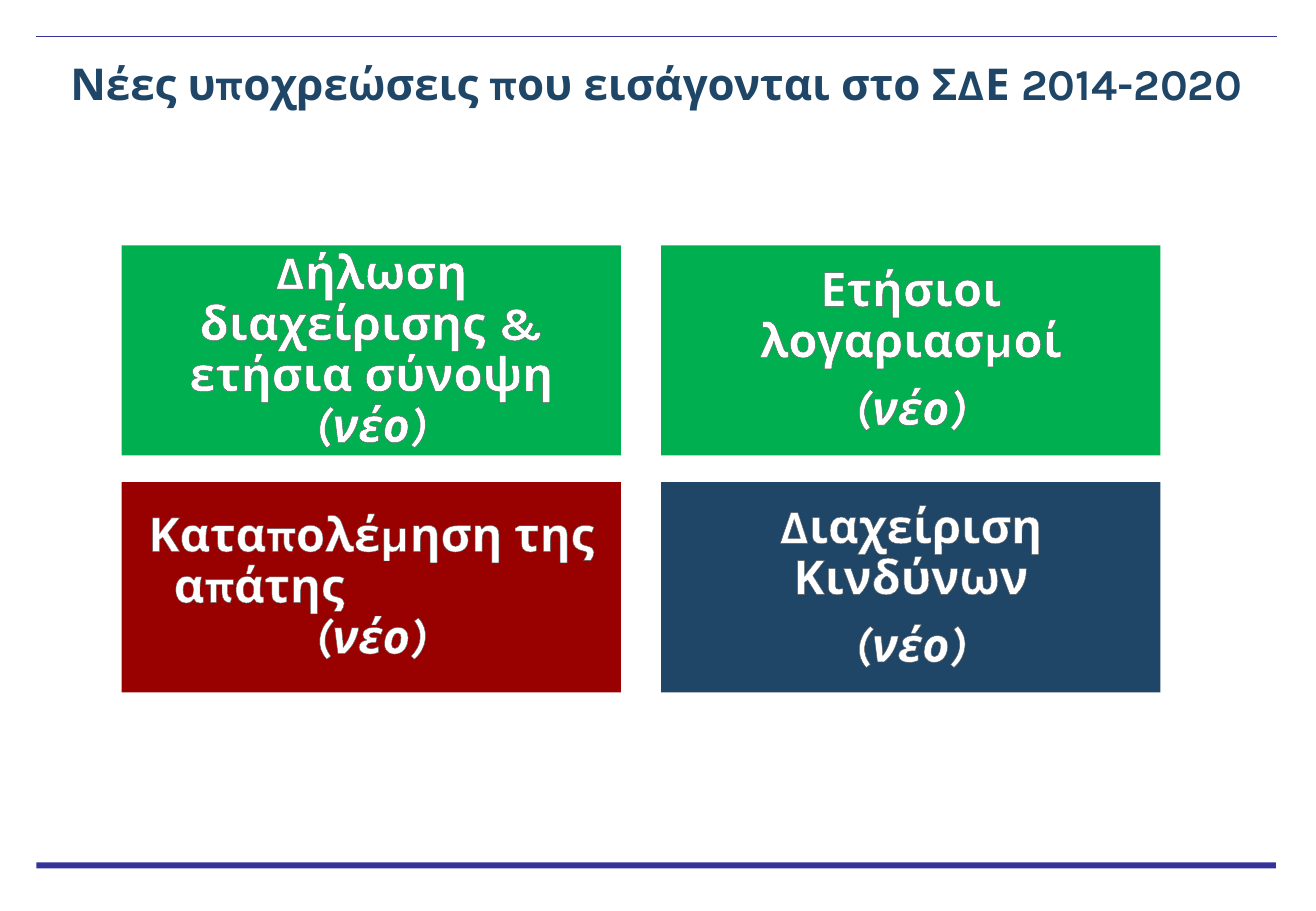
from lxml import etree
from pptx import Presentation
from pptx.dml.color import RGBColor
from pptx.enum.shapes import MSO_CONNECTOR, MSO_SHAPE
from pptx.enum.text import MSO_ANCHOR, MSO_AUTO_SIZE, PP_ALIGN
from pptx.oxml import parse_xml
from pptx.oxml.ns import nsdecls, qn
from pptx.util import Inches, Pt

# Content: each paragraph is a list of (text, italic) runs
TITLE = "Νέες υποχρεώσεις που εισάγονται στο ΣΔΕ 2014-2020"
NEW = ("(νέο)", True)
GREEN, RED, NAVY, RULE = "00B050", "990000", "1F4667", "333399"
WHITE, EDGE = "FFFFFF", "5F5F5F"
# (column, row, fill, gap after a paragraph in points, paragraphs)
OBLIGATIONS = [
    (0, 1, RED, 0, [[("Καταπολέμηση της", False)], [("απάτης", False)], [NEW]]),
    (0, 0, GREEN, 0, [[("Δήλωση διαχείρισης & ετήσια σύνοψη ", False), NEW]]),
    (1, 1, NAVY, 9.8, [[("Διαχείριση Κινδύνων", False)], [NEW]]),
    (1, 0, GREEN, 9.8, [[("Ετήσιοι λογαριασμοί", False)], [NEW]]),
]
INDENTED = {"απάτης": 0.31}  # left-aligned line and its indent

# Grid
LEFT, TOP, WIDTH, HEIGHT = 1, 2.02, 4.11, 1.73
STEP_X, STEP_Y = 4.44, 1.95


def rgb(value):
    return RGBColor.from_string(value)


def set_font(font, size, colour, italic=None):
    for name, value in {"name": "Karla", "size": Pt(size), "bold": True,
                        "italic": italic}.items():
        setattr(font, name, value)
    font.color.rgb = rgb(colour)


def set_frame(frame, anchor, inset):
    for name, value in {"word_wrap": True, "auto_size": MSO_AUTO_SIZE.NONE,
                        "vertical_anchor": anchor}.items():
        setattr(frame, name, value)
    for side in ("left", "top", "right", "bottom"):
        setattr(frame, f"margin_{side}", Inches(inset))


def add_rectangle(left, top, width, height, fill):
    rectangle = slide.shapes.add_shape(
        MSO_SHAPE.RECTANGLE, *map(Inches, (left, top, width, height)))
    rectangle.shadow.inherit = False
    rectangle.fill.solid()
    rectangle.fill.fore_color.rgb = rgb(fill)
    rectangle.line.fill.background()
    return rectangle


def add_run(paragraph, text, italic):
    run = paragraph.add_run()
    run.text = text
    set_font(run.font, 28, WHITE, italic)
    # Thin grey edge around the letters
    run.font._element.insert(0, parse_xml(
        f'<a:ln {nsdecls("a")} w="12700"><a:solidFill>'
        f'<a:srgbClr val="{EDGE}"/></a:solidFill></a:ln>'))


prs = Presentation()
prs.slide_width, prs.slide_height = Inches(10.83), Inches(7.5)
slide = prs.slides.add_slide(prs.slide_layouts[5])

# Rules at the bottom and the top
add_rectangle(0.3, 7.1, 10.2, 0.05, RULE)
top_rule = slide.shapes.add_connector(
    MSO_CONNECTOR.STRAIGHT, *map(Inches, (0.3, 0.3, 10.51, 0.3)))
top_rule.line.color.rgb = rgb(RULE)
top_rule.line.width = Pt(1)
etree.SubElement(top_rule._element.spPr, qn("a:effectLst"))

# Title
title = slide.shapes.title
title.left, title.top, title.width, title.height = map(
    Inches, (0.26, 0.47, 10.29, 0.97))
title.text = TITLE
set_frame(title.text_frame, MSO_ANCHOR.TOP, 0)
heading = title.text_frame.paragraphs[0]
heading.alignment = PP_ALIGN.CENTER
set_font(heading.runs[0].font, 26, NAVY)

# Obligation boxes
for column, row, fill, gap, paragraphs in OBLIGATIONS:
    box = add_rectangle(LEFT + column * STEP_X, TOP + row * STEP_Y,
                        WIDTH, HEIGHT, fill)
    frame = box.text_frame
    set_frame(frame, MSO_ANCHOR.MIDDLE, 0.12)
    for index, runs in enumerate(paragraphs):
        paragraph = frame.add_paragraph() if index else frame.paragraphs[0]
        indent = INDENTED.get(runs[0][0])
        paragraph.alignment = PP_ALIGN.LEFT if indent else PP_ALIGN.CENTER
        if indent:
            paragraph._p.get_or_add_pPr().set("marL", str(Inches(indent)))
        paragraph.line_spacing = 0.9
        paragraph.space_after = Pt(gap)
        for text, italic in runs:
            add_run(paragraph, text, italic)

prs.save("out.pptx")
